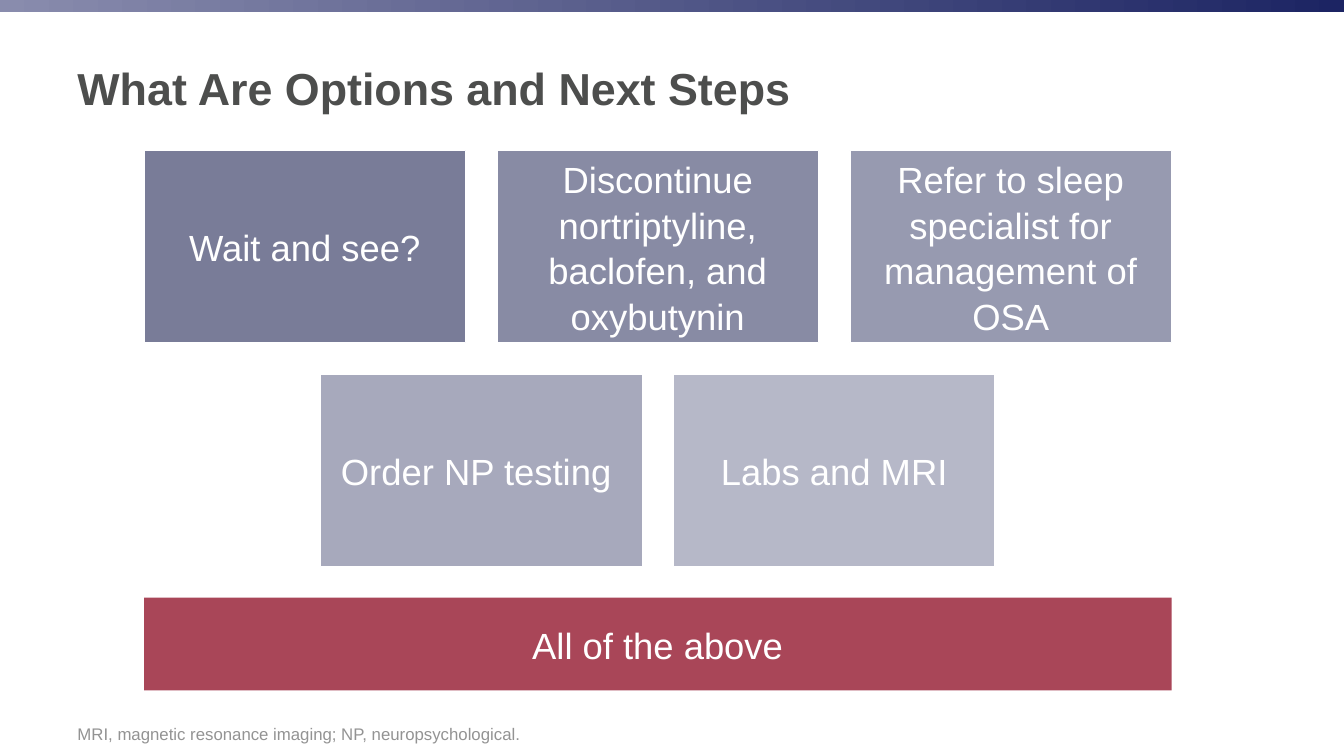
from pptx import Presentation
from pptx.dml.color import RGBColor
from pptx.enum.shapes import MSO_SHAPE as Shape
from pptx.enum.text import MSO_ANCHOR as Anchor, PP_ALIGN as Align
from pptx.util import Inches, Pt

TITLE = "What Are Options and Next Steps"
FOOTNOTE = "MRI, magnetic resonance imaging; NP, neuropsychological."
OPTION_ROWS = [
    [("Wait and see?", "slate1"),
     ("Discontinue nortriptyline, baclofen, and oxybutynin", "slate2"),
     ("Refer to sleep specialist for management of OSA", "slate3")],
    [("Order NP testing ", "slate4"), ("Labs and MRI", "slate5")],
]
SUMMARY = "All of the above"
COLORS = {
    "slate1": "797C98", "slate2": "888BA4", "slate3": "979AB0",
    "slate4": "A7A9BC", "slate5": "B6B8C8", "red": "A94658",
    "white": "FFFFFF", "title": "4D4E4D", "footnote": "939393",
    "bar_start": "898CAD", "bar_end": "1C2463",
}

SLIDE_W, SLIDE_H = 13.33, 7.5
MARGIN, TEXT_W = 0.67, 11.75
GRID_LEFT, GRID_TOP, GRID_W = 1.43, 1.49, 10.19
CARD_W, CARD_H = 3.19, 1.91
GAP = (GRID_W - 3 * CARD_W) / 2
SUMMARY_TOP, SUMMARY_H = 5.93, 0.92


def color(name):
    return RGBColor.from_string(COLORS[name])


def write(box, text, size, ink, anchor, align=Align.LEFT, bold=False):
    frame = box.text_frame
    frame.word_wrap = True
    frame.vertical_anchor = anchor
    para = frame.paragraphs[0]
    para.alignment = align
    span = para.add_run()
    span.text = text
    span.font.name = "Arial"
    span.font.size = Pt(size)
    span.font.bold = bold
    span.font.color.rgb = color(ink)
    return para


def add_rect(page, left, top, width, height):
    rect = page.shapes.add_shape(Shape.RECTANGLE, *map(Inches, (left, top, width, height)))
    rect.shadow.inherit = False
    rect.line.fill.background()
    return rect


def add_card(page, left, top, width, height, text, fill, outlined=True):
    card = add_rect(page, left, top, width, height)
    card.fill.solid()
    card.fill.fore_color.rgb = color(fill)
    if outlined:
        card.line.color.rgb = color("white")
        card.line.width = Pt(1)
    frame = card.text_frame
    frame.margin_left = frame.margin_right = Inches(0.11)
    frame.margin_top = frame.margin_bottom = Inches(0.11)
    para = write(card, text, 26, "white", Anchor.MIDDLE, Align.CENTER)
    para.line_spacing = 1.04


def add_label(page, top, height, *style, **options):
    box = page.shapes.add_textbox(*map(Inches, (MARGIN, top, TEXT_W, height)))
    write(box, *style, **options)


def main():
    deck = Presentation()
    deck.slide_width, deck.slide_height = Inches(SLIDE_W), Inches(SLIDE_H)
    page = deck.slides.add_slide(deck.slide_layouts[6])

    bar = add_rect(page, 0, 0, SLIDE_W, 0.12)
    bar.fill.gradient()
    bar.fill.gradient_angle = 0
    for stop, position, name in zip(bar.fill.gradient_stops, (0, 1), ("bar_start", "bar_end")):
        stop.position = position
        stop.color.rgb = color(name)

    add_label(page, 0.22, 1.3, TITLE, 32, "title", Anchor.MIDDLE, bold=True)
    add_label(page, 6.95, 0.48, FOOTNOTE, 12, "footnote", Anchor.BOTTOM)

    for row, options in enumerate(OPTION_ROWS):
        row_w = len(options) * (CARD_W + GAP) - GAP
        row_left = GRID_LEFT + (GRID_W - row_w) / 2
        for column, (text, fill) in enumerate(options):
            add_card(page, row_left + column * (CARD_W + GAP),
                     GRID_TOP + row * (CARD_H + GAP), CARD_W, CARD_H, text, fill)
    add_card(page, GRID_LEFT, SUMMARY_TOP, GRID_W, SUMMARY_H, SUMMARY, "red", outlined=False)

    deck.save("out.pptx")


if __name__ == "__main__":
    main()
